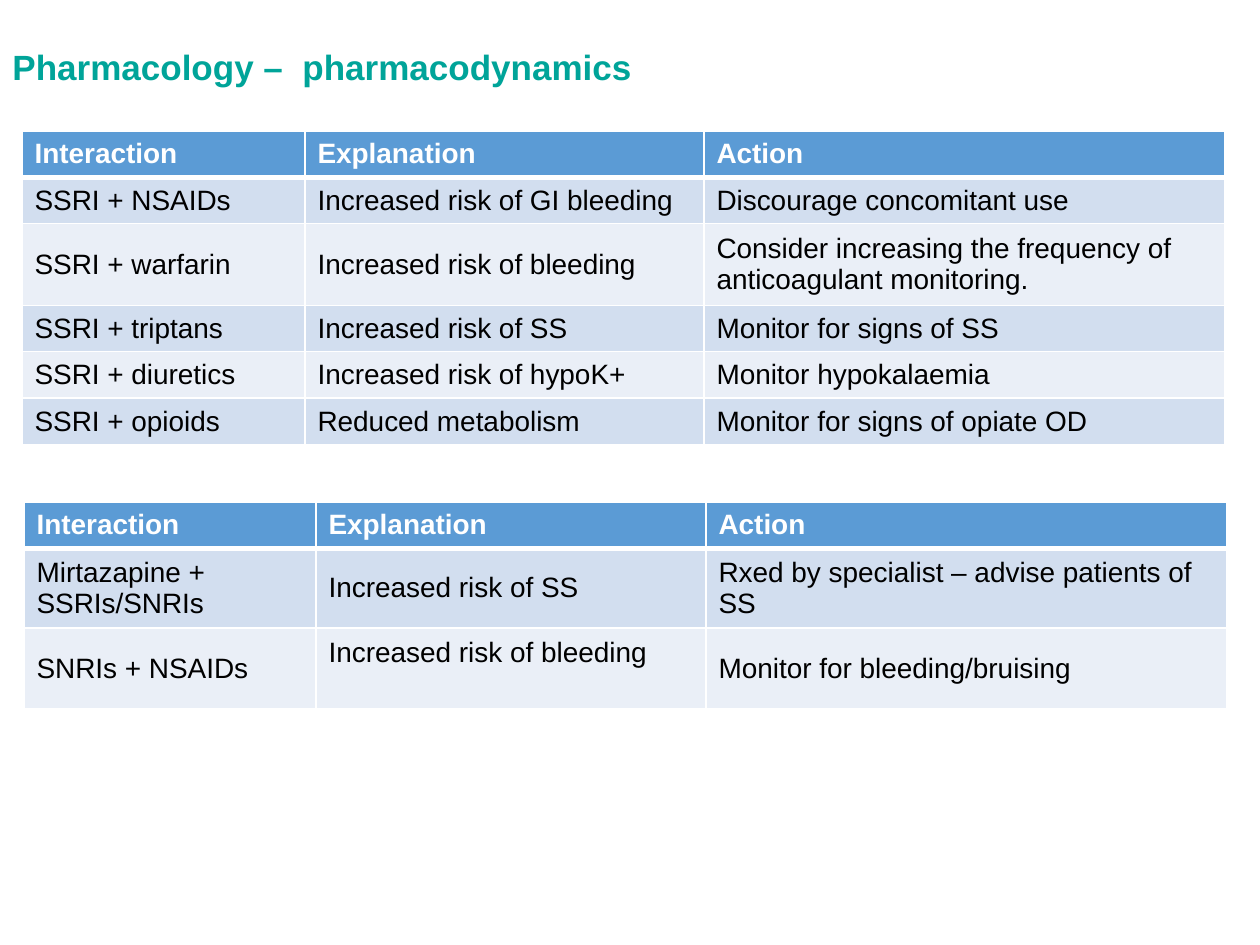
from dataclasses import dataclass

from lxml.etree import SubElement
from pptx import Presentation
from pptx.dml.color import RGBColor
from pptx.enum.text import MSO_ANCHOR as Anchor
from pptx.oxml.ns import qn
from pptx.util import Pt

EMU_PER_PX = 914400 / 126


@dataclass(frozen=True)
class Theme:
    font: str = "Arial"
    title_size: int = 20
    cell_size: int = 16
    title: str = "00A499"
    header_fill: str = "5B9BD5"
    header_text: str = "FFFFFF"
    body_text: str = "000000"
    bands: tuple[str, str] = ("D2DEEF", "EAEFF7")
    border: str = "FFFFFF"
    thin: int = 1
    thick: int = 3


@dataclass(frozen=True)
class InteractionTable:
    left: int
    top: int
    columns: tuple[int, ...]
    row_heights: tuple[int, ...]
    entries: tuple[tuple[str, str, str], ...]


THEME = Theme()
HEADINGS = ("Interaction", "Explanation", "Action")
LINE_HEIGHT = 31

SSRI_INTERACTIONS = InteractionTable(
    22, 131, (283, 399, 521), (46, 46, 82, 46, 46, 47),
    (
        ("SSRI + NSAIDs", "Increased risk of GI bleeding", "Discourage concomitant use"),
        ("SSRI + warfarin", "Increased risk of bleeding",
         "Consider increasing the frequency of anticoagulant monitoring."),
        ("SSRI + triptans", "Increased risk of SS", "Monitor for signs of SS"),
        ("SSRI + diuretics", "Increased risk of hypoK+", "Monitor hypokalaemia"),
        ("SSRI + opioids", "Reduced metabolism ", "Monitor for signs of opiate OD"),
    ),
)
OTHER_INTERACTIONS = InteractionTable(
    24, 502, (292, 390, 521), (45, 80, 81),
    (
        ("Mirtazapine + SSRIs/SNRIs", "Increased risk of SS ",
         "Rxed by specialist – advise patients of SS"),
        ("SNRIs + NSAIDs", "Increased risk of bleeding ", "Monitor for bleeding/bruising"),
    ),
)


def px(length: int) -> int:
    return round(length * EMU_PER_PX)


def write(frame, text: str, size: int, color: str, bold: bool) -> None:
    frame.text = text
    font = frame.paragraphs[0].runs[0].font
    font.name, font.size, font.bold = THEME.font, Pt(size), bold
    font.color.rgb = RGBColor.from_string(color)


def set_borders(cell, top: int, bottom: int) -> None:
    """Outline a cell; must run before its fill is set, to keep the XML order."""
    properties = cell._tc.get_or_add_tcPr()
    widths = {"a:lnL": THEME.thin, "a:lnR": THEME.thin, "a:lnT": top, "a:lnB": bottom}
    for side, width in widths.items():
        line = SubElement(properties, qn(side), w=str(Pt(width)))
        fill = SubElement(line, qn("a:solidFill"))
        SubElement(fill, qn("a:srgbClr"), val=THEME.border)


def style_cell(cell, text: str, row: int) -> None:
    is_header = row == 0
    set_borders(cell,
                top=THEME.thick if row == 1 else THEME.thin,
                bottom=THEME.thick if is_header else THEME.thin)
    cell.fill.solid()
    fill = THEME.header_fill if is_header else THEME.bands[(row - 1) % 2]
    cell.fill.fore_color.rgb = RGBColor.from_string(fill)
    cell.vertical_anchor = Anchor.MIDDLE
    color = THEME.header_text if is_header else THEME.body_text
    write(cell.text_frame, text, THEME.cell_size, color, is_header)


def draw_table(slide, spec: InteractionTable):
    rows = (HEADINGS, *spec.entries)
    table = slide.shapes.add_table(
        len(rows), len(HEADINGS), px(spec.left), px(spec.top),
        px(sum(spec.columns)), px(sum(spec.row_heights))).table
    for column, width in zip(table.columns, spec.columns):
        column.width = px(width)
    for index, (height, texts) in enumerate(zip(spec.row_heights, rows)):
        table.rows[index].height = px(height)
        for cell, text in zip(table.rows[index].cells, texts):
            style_cell(cell, text, index)
    return table


def draw_title(slide) -> None:
    title = slide.shapes.add_textbox(px(0), px(39), px(1128), px(55))
    title.text_frame.word_wrap = True
    write(title.text_frame, "Pharmacology –  pharmacodynamics",
          THEME.title_size, THEME.title, True)


def main() -> None:
    deck = Presentation()
    deck.slide_width, deck.slide_height = px(1260), px(945)
    slide = deck.slides.add_slide(deck.slide_layouts[6])
    draw_title(slide)
    draw_table(slide, SSRI_INTERACTIONS)
    others = draw_table(slide, OTHER_INTERACTIONS)
    # This explanation sits half a line above the middle of its row.
    raised = others.cell(2, 1)
    raised.margin_bottom = raised.margin_top + px(LINE_HEIGHT)
    deck.save("out.pptx")


if __name__ == "__main__":
    main()
